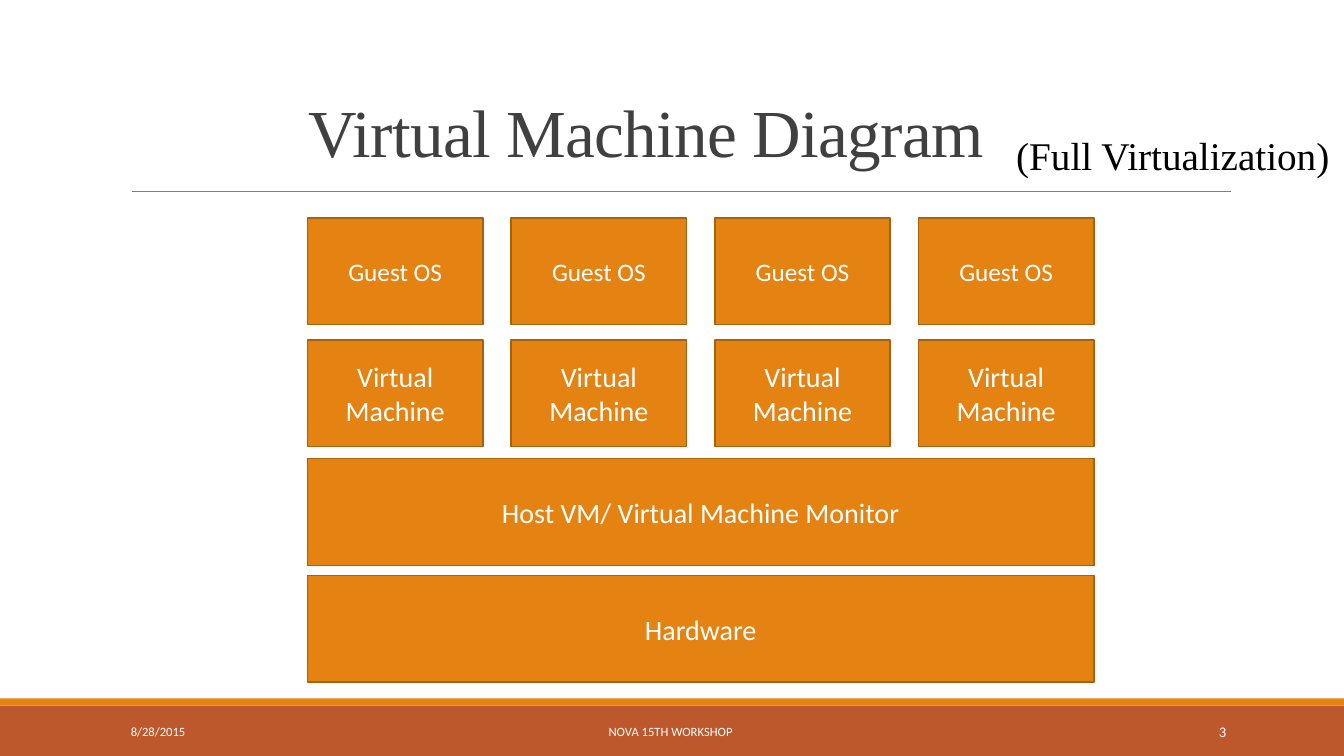
from dataclasses import dataclass

from lxml.etree import SubElement
from pptx import Presentation
from pptx.dml.color import RGBColor
from pptx.enum.shapes import MSO_CONNECTOR, MSO_SHAPE
from pptx.enum.text import MSO_ANCHOR, PP_ALIGN
from pptx.oxml.ns import qn
from pptx.util import Inches, Pt


@dataclass(frozen=True)
class Theme:
    orange: str = "E48312"
    outline: str = "A9610D"
    rust: str = "BD582C"
    rule: str = "808080"
    heading: str = "404040"
    black: str = "000000"
    white: str = "FFFFFF"
    serif: str = "Times New Roman"
    sans: str = "Calibri"
    title_size: float = 48
    subtitle_size: float = 28
    layer_size: float = 20
    guest_size: float = 18
    page_size: float = 10.5
    footer_size: float = 9


@dataclass(frozen=True)
class Box:
    left: float
    top: float
    width: float
    height: float

    def lengths(self):
        return [Inches(value) for value in (self.left, self.top, self.width, self.height)]


THEME = Theme()


def write_text(shape, text, size, color, font, align, anchor):
    frame = shape.text_frame
    frame.text = text
    frame.word_wrap = True
    frame.vertical_anchor = anchor
    paragraph = frame.paragraphs[0]
    paragraph.alignment = align
    run = paragraph.runs[0]
    run.font.size = Pt(size)
    run.font.name = font
    run.font.color.rgb = RGBColor.from_string(color)
    return paragraph


def add_rectangle(slide, box, fill, outline=None):
    shape = slide.shapes.add_shape(MSO_SHAPE.RECTANGLE, *box.lengths())
    shape.shadow.inherit = False
    shape.fill.solid()
    shape.fill.fore_color.rgb = RGBColor.from_string(fill)
    if outline:
        shape.line.color.rgb = RGBColor.from_string(outline)
        shape.line.width = Pt(1.25)
    else:
        shape.line.fill.background()
    return shape


def add_layer(slide, box, text, size):
    shape = add_rectangle(slide, box, THEME.orange, THEME.outline)
    write_text(shape, text, size, THEME.white, THEME.sans, PP_ALIGN.CENTER, MSO_ANCHOR.MIDDLE)


def add_header(slide, box):
    title = slide.shapes.title
    title.left, title.top, title.width, title.height = box.lengths()
    paragraph = write_text(title, "Virtual Machine Diagram", THEME.title_size, THEME.heading,
                           THEME.serif, PP_ALIGN.CENTER, MSO_ANCHOR.BOTTOM)
    paragraph.line_spacing = 0.85
    paragraph.runs[0].font._element.set("spc", "-50")

    rule_top = Inches(box.top + box.height + 0.15)
    rule = slide.shapes.add_connector(MSO_CONNECTOR.STRAIGHT, Inches(box.left + 0.65), rule_top,
                                      Inches(box.left + box.width + 0.05), rule_top)
    rule.line.color.rgb = RGBColor.from_string(THEME.rule)
    rule.line.width = Pt(0.5)
    SubElement(rule._element.spPr, qn("a:effectLst"))

    subtitle_box = Box(box.left + 9.32, box.top + 0.95, 3.36, 0.57)
    subtitle = slide.shapes.add_textbox(*subtitle_box.lengths())
    write_text(subtitle, "(Full Virtualization)", THEME.subtitle_size, THEME.black,
               THEME.serif, PP_ALIGN.LEFT, MSO_ANCHOR.TOP)


def add_diagram(slide, box):
    columns = 4
    block_width, block_height = 1.74, 1.06
    pitch = (box.width - block_width) / (columns - 1)
    block_rows = [
        (0, "Guest OS", THEME.guest_size),
        (1.21, "Virtual Machine", THEME.layer_size),
    ]
    for offset, text, size in block_rows:
        for column in range(columns):
            block = Box(box.left + column * pitch, box.top + offset, block_width, block_height)
            add_layer(slide, block, text, size)
    for offset, text in [(2.39, "Host VM/ Virtual Machine Monitor"), (3.55, "Hardware")]:
        layer = Box(box.left, box.top + offset, box.width, block_height)
        add_layer(slide, layer, text, THEME.layer_size)


def add_footer(slide, box):
    add_rectangle(slide, box, THEME.rust)
    add_rectangle(slide, Box(box.left, box.top - 0.07, box.width, 0.07), THEME.orange)
    entries = [
        (1.2, 2.7, "8/28/2015", THEME.footer_size, PP_ALIGN.LEFT),
        (4.03, 5.27, "NOVA 15TH WORKSHOP ", THEME.footer_size, PP_ALIGN.CENTER),
        (10.83, 1.43, "3", THEME.page_size, PP_ALIGN.RIGHT),
    ]
    for offset, width, text, size, align in entries:
        entry_box = Box(box.left + offset, box.top + 0.06, width, 0.4)
        entry = slide.shapes.add_textbox(*entry_box.lengths())
        write_text(entry, text, size, THEME.white, THEME.sans, align, MSO_ANCHOR.MIDDLE)


def main():
    presentation = Presentation()
    presentation.slide_width = Inches(13.33)
    presentation.slide_height = Inches(7.5)
    slide = presentation.slides.add_slide(presentation.slide_layouts[5])
    add_footer(slide, Box(0, 7, 13.33, 0.5))
    add_header(slide, Box(0.66, 0.3, 11.5, 1.45))
    add_diagram(slide, Box(3.05, 2.16, 7.8, 4.61))
    presentation.save("out.pptx")


if __name__ == "__main__":
    main()
